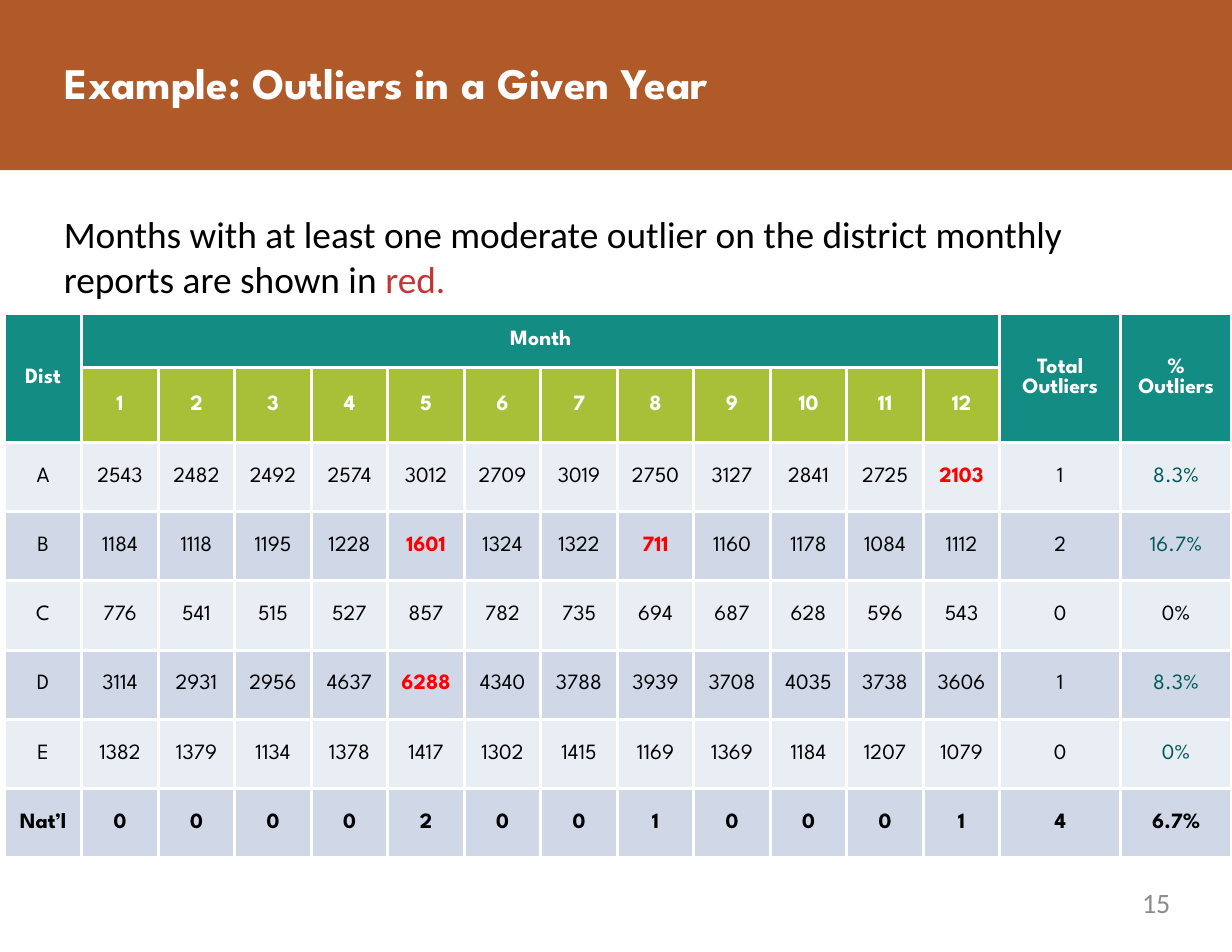
from dataclasses import dataclass

from lxml import etree
from pptx import Presentation
from pptx.dml.color import RGBColor
from pptx.enum import shapes, text
from pptx.oxml import ns
from pptx.util import Inches, Pt


@dataclass
class Theme:
    heading_font: str = "League Spartan"
    body_font: str = "Calibri"
    title_size: int = 28
    intro_size: int = 24
    number_size: int = 18
    table_size: int = 14
    banner: str = "B05A2A"
    header: str = "138D84"
    month: str = "A7C038"
    bands: tuple = ("E9EDF4", "D0D8E8")
    white: str = "FFFFFF"
    black: str = "000000"
    outlier: str = "FF0000"
    percent: str = "005A58"
    red_word: str = "C73437"
    number: str = "8C8C8C"


theme = Theme()


def add_run(paragraph, words, font, size, color, bold=False):
    run = paragraph.add_run()
    run.text = words
    run.font.name = font
    run.font.size = Pt(size)
    run.font.bold = bold
    run.font.color.rgb = RGBColor.from_string(color)


def fill_cell(cell, words, fill, color, bold):
    cell.fill.solid()
    cell.fill.fore_color.rgb = RGBColor.from_string(fill)
    cell.vertical_anchor = text.MSO_ANCHOR.MIDDLE
    cell.margin_left = cell.margin_right = Inches(0.11)
    cell.margin_top = cell.margin_bottom = Inches(0.06)
    paragraph = cell.text_frame.paragraphs[0]
    paragraph.alignment = text.PP_ALIGN.CENTER
    if words:
        add_run(paragraph, words, theme.heading_font, theme.table_size, color, bold)
    properties = cell._tc.get_or_add_tcPr()
    for position, side in enumerate(("a:lnL", "a:lnR", "a:lnT", "a:lnB")):
        border = etree.Element(ns.qn(side), w=str(Pt(2.25)))
        paint = etree.SubElement(border, ns.qn("a:solidFill"))
        etree.SubElement(paint, ns.qn("a:srgbClr"), val=theme.white)
        properties.insert(position, border)


deck = Presentation()
deck.slide_width, deck.slide_height = Inches(11), Inches(8.5)
slide = deck.slides.add_slide(deck.slide_layouts[5])

banner = slide.shapes.add_shape(
    shapes.MSO_SHAPE.RECTANGLE, 0, 0, Inches(11), Inches(1.52))
banner.shadow.inherit = False
banner.fill.solid()
banner.fill.fore_color.rgb = RGBColor.from_string(theme.banner)
banner.line.fill.background()

title = slide.shapes.title
banner.element.addnext(title.element)
title.left, title.top = Inches(0.58), Inches(0.5)
title.width, title.height = Inches(10.53), Inches(0.47)
heading = title.text_frame
heading.margin_left = heading.margin_right = 0
heading.margin_top = heading.margin_bottom = 0
heading.vertical_anchor = text.MSO_ANCHOR.BOTTOM
heading.auto_size = text.MSO_AUTO_SIZE.NONE
heading.paragraphs[0].alignment = text.PP_ALIGN.LEFT
add_run(heading.paragraphs[0], "Example: Outliers in a Given Year",
        theme.heading_font, theme.title_size, theme.white, True)

districts = [
    "A 2543 2482 2492 2574 3012 2709 3019 2750 3127 2841 2725 2103 1 8.3%",
    "B 1184 1118 1195 1228 1601 1324 1322 711 1160 1178 1084 1112 2 16.7%",
    "C 776 541 515 527 857 782 735 694 687 628 596 543 0 0%",
    "D 3114 2931 2956 4637 6288 4340 3788 3939 3708 4035 3738 3606 1 8.3%",
    "E 1382 1379 1134 1378 1417 1302 1415 1169 1369 1184 1207 1079 0 0%",
    "Nat’l 0 0 0 0 2 0 0 1 0 0 0 1 4 6.7%",
]
outliers = {("A", 12), ("B", 5), ("B", 8), ("D", 5)}
column_widths = [0.69] + [8.2 / 12] * 12 + [1.08, 0.99]
row_heights = [0.48, 0.67] + [3.71 / 6] * 6

report = slide.shapes.add_table(
    len(row_heights), len(column_widths),
    Inches(0.04), Inches(2.8), Inches(10.96), Inches(4.86)).table
for column, width in zip(report.columns, column_widths):
    column.width = Inches(width)
for row, height in zip(report.rows, row_heights):
    row.height = Inches(height)

group_labels = ["Dist", "Month"] + [""] * 11 + ["Total Outliers", "% Outliers"]
for place, label in enumerate(group_labels):
    is_month = 1 <= place <= 12
    fill_cell(report.cell(0, place), label, theme.header, theme.white, True)
    fill_cell(report.cell(1, place), str(place) if is_month else "",
              theme.month if is_month else theme.header, theme.white, True)
report.cell(0, 1).merge(report.cell(0, 12))
for place in (0, 13, 14):
    report.cell(0, place).merge(report.cell(1, place))

for index, district in enumerate(districts):
    values = district.split()
    name = values[0]
    for place, value in enumerate(values):
        is_outlier = (name, place) in outliers
        color = theme.outlier if is_outlier else theme.black
        if place == 14 and name in "ABDE":
            color = theme.percent
        fill_cell(report.cell(index + 2, place), value, theme.bands[index % 2],
                  color, is_outlier or name == "Nat’l")

intro = slide.shapes.add_textbox(
    Inches(0.46), Inches(1.83), Inches(10.17), Inches(0.92)).text_frame
intro.word_wrap = True
intro.margin_left = intro.margin_right = Inches(0.11)
intro.margin_top = intro.margin_bottom = Inches(0.06)
for words, color in (
    ("Months with at least one moderate outlier on the district monthly "
     "reports are shown in ", theme.black),
    ("red.", theme.red_word),
):
    add_run(intro.paragraphs[0], words, theme.body_font, theme.intro_size, color)

page_number = slide.shapes.add_textbox(
    Inches(7.92), Inches(7.91), Inches(2.53), Inches(0.42)).text_frame
page_number.word_wrap = True
page_number.margin_left = page_number.margin_right = 0
page_number.margin_top = page_number.margin_bottom = 0
page_number.paragraphs[0].alignment = text.PP_ALIGN.RIGHT
add_run(page_number.paragraphs[0], "15", theme.body_font,
        theme.number_size, theme.number)

deck.save("out.pptx")
